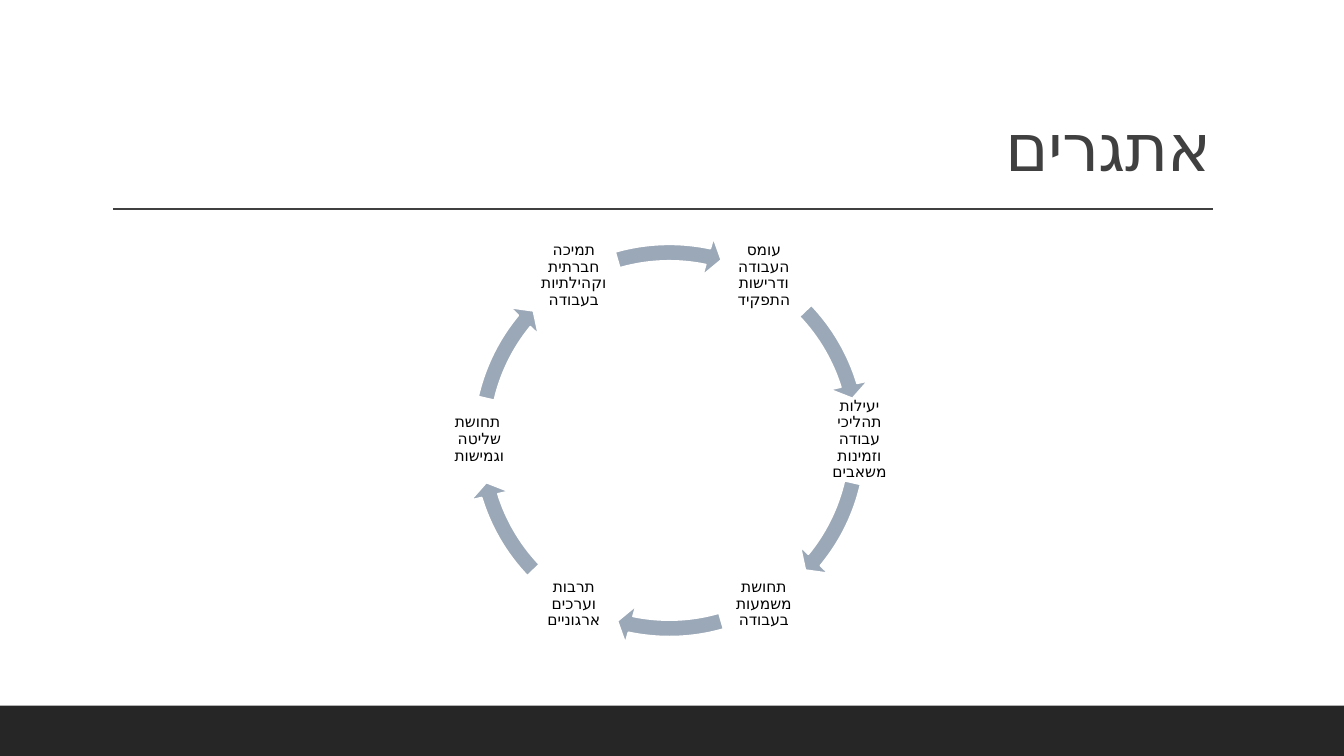
import math

import lxml.etree
import pptx
import pptx.dml.color
import pptx.enum.shapes
import pptx.enum.text
import pptx.oxml.ns
import pptx.util

RGB = pptx.dml.color.RGBColor
ALIGN = pptx.enum.text.PP_ALIGN
ANCHOR = pptx.enum.text.MSO_ANCHOR
SHAPE = pptx.enum.shapes.MSO_SHAPE

WHITE = RGB(0xFF, 0xFF, 0xFF)
BLACK = RGB(0x00, 0x00, 0x00)
FOOTER = RGB(0x26, 0x26, 0x26)
HEADING = RGB(0x40, 0x40, 0x40)
ARROW = RGB(0x9B, 0xA8, 0xB7)

CENTER_X, CENTER_Y = 637, 419
LABEL_RADIUS, LABEL_SIZE, RING_SIZE = 181, 81, 395

CHALLENGES = [
    "עומס העבודה ודרישות התפקיד",
    "יעילות תהליכי עבודה וזמינות משאבים",
    "תחושת משמעות בעבודה",
    "תרבות וערכים ארגוניים",
    " תחושת שליטה וגמישות",
    "תמיכה חברתית וקהילתיות בעבודה",
]
HALF_RING_ARCS = [(12.93, 39.47), (73.96, 101.87), (136.37, 162.9)]


def px(n):
    return pptx.util.Emu(round(n) * 9525)


class Deck:
    title_font = "Roboto"
    label_font = "Karla"

    def __init__(self, width, height):
        self.prs = pptx.Presentation()
        self.prs.slide_width = px(width)
        self.prs.slide_height = px(height)
        self.s = self.prs.slides.add_slide(self.prs.slide_layouts[6])

    def shape(self, kind, x, y, w, h, fill, outline=None):
        sp = self.s.shapes.add_shape(kind, px(x), px(y), px(w), px(h))
        sp.shadow.inherit = False
        sp.fill.solid()
        sp.fill.fore_color.rgb = fill
        if outline is None:
            sp.line.fill.background()
        else:
            sp.line.color.rgb = outline
            sp.line.width = pptx.util.Pt(1.25)
        return sp

    def arc_arrow(self, x, y, size, start, end):
        sp = self.shape(SHAPE.CIRCULAR_ARROW, x, y, size, size, ARROW, WHITE)
        for i, value in enumerate((0.04, 2.5, end * 0.6, start * 0.6, 0.047)):
            sp.adjustments[i] = value

    def line(self, x1, y1, x2, y2, color):
        kind = pptx.enum.shapes.MSO_CONNECTOR.STRAIGHT
        sp = self.s.shapes.add_connector(kind, px(x1), px(y1), px(x2), px(y2))
        sp.line.color.rgb = color
        sp.line.width = pptx.util.Pt(1)
        sp_pr = sp._element.spPr
        lxml.etree.SubElement(sp_pr, pptx.oxml.ns.qn("a:effectLst"))

    def text(self, x, y, w, h, text, font, size, color, align, anchor, inset, spacing=0):
        tf = self.s.shapes.add_textbox(px(x), px(y), px(w), px(h)).text_frame
        tf.word_wrap = True
        tf.vertical_anchor = anchor
        tf.margin_left = tf.margin_right = px(inset[0])
        tf.margin_top = tf.margin_bottom = px(inset[1])
        p = tf.paragraphs[0]
        p.alignment = align
        p.line_spacing = 0.9
        p._p.get_or_add_pPr().set("rtl", "1")
        r = p.add_run()
        r.text = text
        r.font.name = font
        r.font.size = pptx.util.Pt(size)
        r.font.color.rgb = color
        r_pr = r._r.get_or_add_rPr()
        r_pr.set("lang", "he-IL")
        if spacing:
            r_pr.set("spc", str(spacing))
        cs = lxml.etree.SubElement(r_pr, pptx.oxml.ns.qn("a:cs"))
        cs.set("typeface", font)

    def title(self, text):
        self.text(108, 30, 1056, 152, text, self.title_font, 47, HEADING,
                  ALIGN.RIGHT, ANCHOR.BOTTOM, (10, 5), -50)

    def label(self, x, y, text):
        self.text(x, y, LABEL_SIZE, LABEL_SIZE, text, self.label_font, 11, BLACK,
                  ALIGN.CENTER, ANCHOR.MIDDLE, (2, 2))


def main():
    deck = Deck(1280, 720)
    deck.shape(SHAPE.RECTANGLE, 0, 672, 1280, 48, FOOTER)
    deck.line(1155, 199, 108, 199, HEADING)
    deck.title("אתגרים")

    arcs = [(start + turn, end + turn) for turn in (0, 180) for start, end in HALF_RING_ARCS]
    for start, end in arcs:
        deck.arc_arrow(CENTER_X - RING_SIZE / 2, CENTER_Y - RING_SIZE / 2, RING_SIZE, start, end)
    for i, challenge in enumerate(CHALLENGES):
        angle = math.radians(60 * i - 60)
        deck.label(CENTER_X + LABEL_RADIUS * math.cos(angle) - LABEL_SIZE / 2,
                   CENTER_Y + LABEL_RADIUS * math.sin(angle) - LABEL_SIZE / 2, challenge)

    deck.prs.save("out.pptx")


if __name__ == "__main__":
    main()
